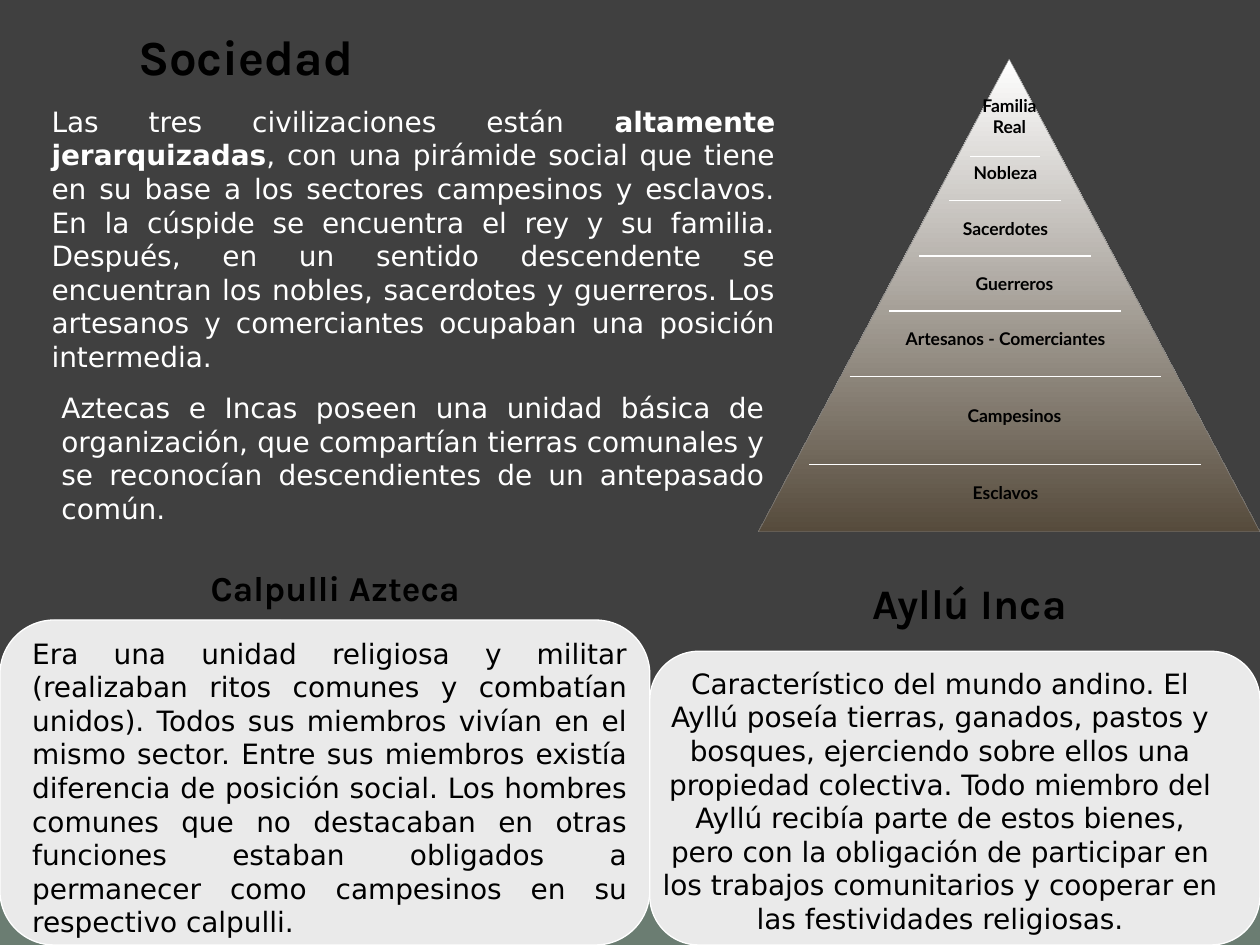
from lxml import etree
from pptx import Presentation
from pptx.dml.color import RGBColor
from pptx.enum.shapes import MSO_CONNECTOR, MSO_SHAPE
from pptx.enum.text import MSO_AUTO_SIZE, PP_ALIGN
from pptx.oxml.ns import qn
from pptx.util import Cm, Pt

CENTER, JUSTIFY = PP_ALIGN.CENTER, PP_ALIGN.JUSTIFY
RECTANGLE = MSO_SHAPE.RECTANGLE
ROUNDED = MSO_SHAPE.ROUNDED_RECTANGLE
TRIANGLE = MSO_SHAPE.ISOSCELES_TRIANGLE
STRAIGHT = MSO_CONNECTOR.STRAIGHT
GROW = MSO_AUTO_SIZE.SHAPE_TO_FIT_TEXT

COLORS = {
    "background": "404040", "band": "6B7D72", "band_edge": "93A299",
    "card": "EAEAEA", "white": "FFFFFF", "black": "000000",
    "base": "564B3C", "outline": "808080",
}
HEADING, BODY, LABEL = "Karla", "DejaVu Sans", "Lato"

# text, centre, top, width, height (cm)
LEVELS = [
    ("Familia Real", 20.35, 1.8, 2.03, 1.17),
    ("Nobleza", 20.27, 3.15, 3.05, 0.71),
    ("Sacerdotes", 20.27, 4.27, 3.05, 0.71),
    ("Guerreros", 20.45, 5.38, 3.05, 0.71),
    ("Artesanos - Comerciantes", 20.27, 6.48, 5.89, 0.71),
    ("Campesinos", 20.45, 8.05, 3.86, 0.71),
    ("Esclavos", 20.27, 9.6, 3.05, 0.71),
]
# height on the slide and width (cm)
DIVIDERS = [(3.15, 1.42), (4.04, 2.26), (5.16, 3.45),
            (6.27, 4.67), (7.59, 6.27), (9.37, 7.9)]
PYRAMID_CENTER = 20.26

HIERARCHY = [
    ("Las tres civilizaciones están ", False),
    ("altamente jerarquizadas", True),
    (", con una pirámide social que tiene en su base a los sectores campesinos "
     "y esclavos. En la cúspide se encuentra el rey y su familia. Después, en un "
     "sentido descendente se encuentran los nobles, sacerdotes y guerreros. Los "
     "artesanos y comerciantes ocupaban una posición intermedia.", False),
]
UNIT = ("Aztecas e Incas poseen una unidad básica de organización, que compartían "
        "tierras comunales y se reconocían descendientes de un antepasado común.")
CALPULLI = ("Era una unidad religiosa y militar (realizaban ritos comunes y combatían "
            "unidos). Todos sus miembros vivían en el mismo sector. Entre sus miembros "
            "existía diferencia de posición social. Los hombres comunes que no "
            "destacaban en otras funciones estaban obligados a permanecer como "
            "campesinos en su respectivo calpulli.")
AYLLU = ("Característico del mundo andino. El Ayllú poseía tierras, ganados, pastos y "
         "bosques, ejerciendo sobre ellos una propiedad colectiva. Todo miembro del "
         "Ayllú recibía parte de estos bienes, pero con la obligación de participar "
         "en los trabajos comunitarios y cooperar en las festividades religiosas.")


def rgb(name):
    return RGBColor.from_string(COLORS[name])


class SlideBuilder:
    """Draws on the slide, or on the group opened last; lengths in cm."""

    def __init__(self, slide):
        self.slide = slide
        self.shapes = slide.shapes
        slide.background.fill.solid()
        slide.background.fill.fore_color.rgb = rgb("background")

    def start_group(self):
        self.shapes = self.slide.shapes.add_group_shape().shapes

    def end_group(self):
        self.shapes = self.slide.shapes

    def shape(self, kind, box, fill, line=None, line_width=0.75):
        """Add a preset shape; a pair of fill colours runs from top to bottom."""
        shape = self.shapes.add_shape(kind, *map(Cm, box))
        shape.shadow.inherit = False
        if isinstance(fill, tuple):
            shape.fill.gradient()
            shape.fill.gradient_angle = 270
            for position, (stop, color) in enumerate(zip(shape.fill.gradient_stops, fill)):
                stop.position = position
                stop.color.rgb = rgb(color)
        else:
            shape.fill.solid()
            shape.fill.fore_color.rgb = rgb(fill)
        if line:
            shape.line.color.rgb = rgb(line)
            shape.line.width = Pt(line_width)
        else:
            shape.line.fill.background()

    def text(self, box, runs, font, size, color="black", align=CENTER):
        """Add a one-paragraph box from (text, bold) runs."""
        frame = self.shapes.add_textbox(*map(Cm, box)).text_frame
        frame.word_wrap = True
        frame.auto_size = GROW
        paragraph = frame.paragraphs[0]
        paragraph.alignment = align
        for content, bold in runs:
            run = paragraph.add_run()
            run.text = content
            run.font.name = font
            run.font.size = Pt(size)
            run.font.bold = bold
            run.font.color.rgb = rgb(color)

    def divider(self, center, top, width):
        left, right = center - width / 2, center + width / 2
        line = self.shapes.add_connector(STRAIGHT, Cm(left), Cm(top), Cm(right), Cm(top))
        line.line.color.rgb = rgb("white")
        line.line.width = Pt(0.75)
        properties = line._element.find(qn("p:spPr"))
        etree.SubElement(properties, qn("a:effectLst"))

    def card(self, box, text_box, content, align, title_box, title, title_size):
        self.start_group()
        self.shape(ROUNDED, box, "card", "white")
        self.text(text_box, [(content, False)], BODY, 16, align=align)
        self.text(title_box, [(title, True)], HEADING, title_size)
        self.end_group()

    def pyramid(self):
        self.start_group()
        self.shape(TRIANGLE, (15.29, 1.19, 10.11, 9.53), ("white", "base"), "outline", 0.25)
        for label, center, top, width, height in LEVELS:
            self.text((center - width / 2, top, width, height), [(label, True)], LABEL, 10)
        for top, width in DIVIDERS:
            self.divider(PYRAMID_CENTER, top, width)
        self.end_group()


def main():
    presentation = Presentation()
    presentation.slide_width, presentation.slide_height = Cm(25.4), Cm(19.05)
    builder = SlideBuilder(presentation.slides.add_slide(presentation.slide_layouts[6]))

    builder.shape(RECTANGLE, (0, 17.78, 25.4, 1.27), "band")
    builder.shape(RECTANGLE, (0, 17.6, 25.4, 0.18), "band_edge")
    builder.text((1.78, 0.41, 6.35, 1.45), [("Sociedad", True)], HEADING, 28)
    builder.text((0.79, 1.98, 15.09, 5.74), HIERARCHY, BODY, 16, "white", JUSTIFY)
    builder.pyramid()
    builder.text((0.99, 7.75, 14.68, 3), [(UNIT, False)], BODY, 16, "white", JUSTIFY)
    builder.card((0, 12.5, 13.1, 6.55), (0.4, 12.7, 12.5, 6.4), CALPULLI, JUSTIFY,
                 (3.38, 11.3, 6.76, 1.12), "Calpulli Azteca", 20)
    builder.card((13.1, 13.13, 12.3, 5.92), (13.1, 13.31, 11.71, 5.74), AYLLU, CENTER,
                 (16.28, 11.51, 6.53, 1.3), "Ayllú Inca", 24)

    presentation.save("out.pptx")


if __name__ == "__main__":
    main()
